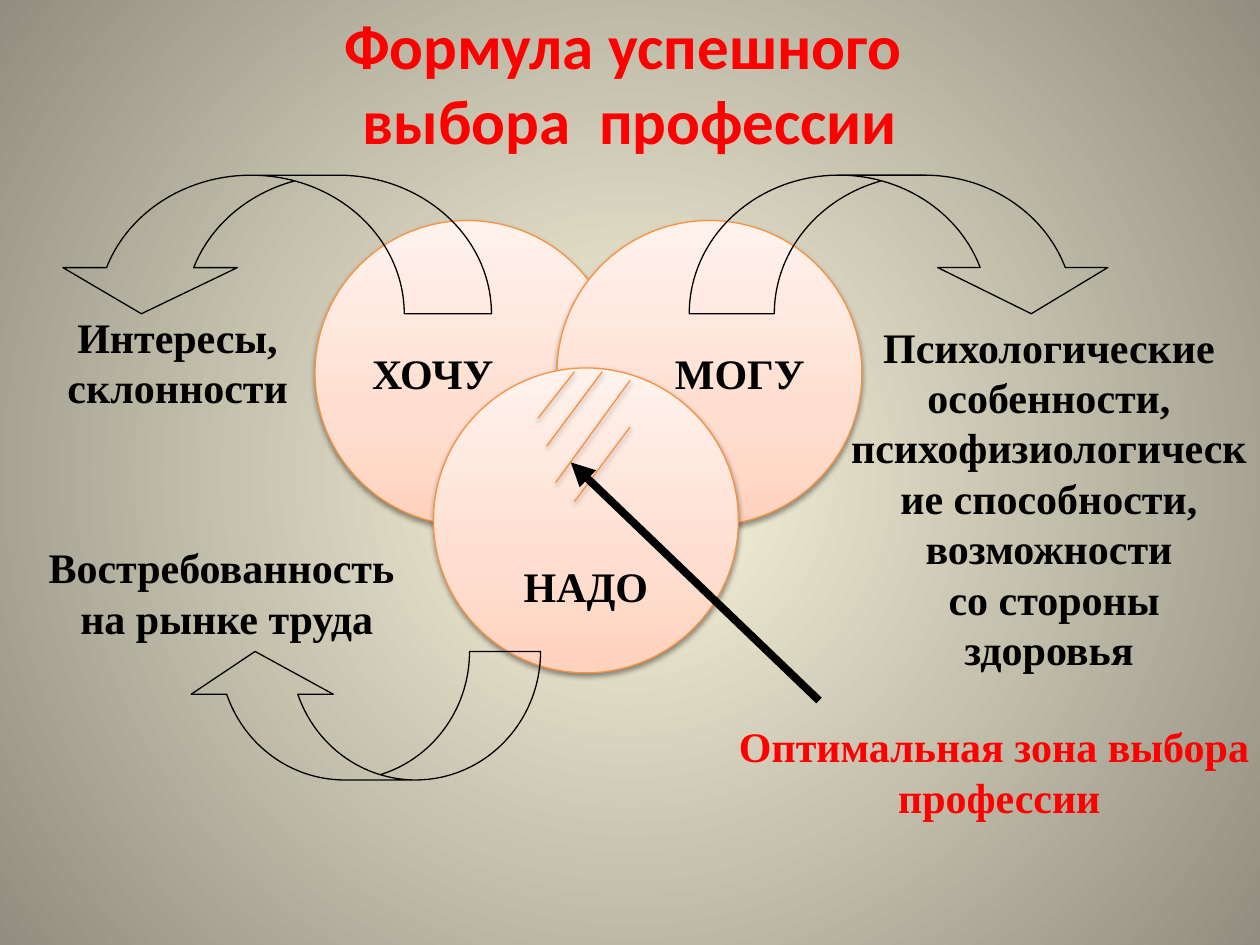
from lxml import etree
from pptx import Presentation, util as u
from pptx.dml.color import RGBColor
from pptx.enum import shapes, text
from pptx.oxml import ns, parse_xml

HUES = {
    "red": "FF0000", "ink": "000000", "rim": "F69240",
    "low": "FFD2BD", "mid": "FFDED0", "high": "FFF2ED",
    "glow": "FCF7DD", "edge": "918E81",
}
SERIF = "Times New Roman"
ALIGN = text.PP_ALIGN
KIND = shapes.MSO_SHAPE


class Board:
    """Holds the style and the current slide."""

    def __init__(self, deck):
        self.slide = deck.slides.add_slide(deck.slide_layouts[6])
        self.items = self.slide.shapes

    def hue(self, name):
        return RGBColor.from_string(HUES[name])

    def box(self, *nums):
        return [u.Inches(n) for n in nums]

    def blend(self, fill, node, stops, shade):
        fill.gradient()
        grad = node.find(".//" + ns.qn("a:gradFill"))
        marks = "".join(
            f'<a:gs pos="{pos * 1000}"><a:srgbClr val="{HUES[name]}"/></a:gs>'
            for pos, name in stops)
        fresh = parse_xml(
            f'<a:gradFill {ns.nsdecls("a")} rotWithShape="1">'
            f'<a:gsLst>{marks}</a:gsLst>{shade}</a:gradFill>')
        grad.getparent().replace(grad, fresh)

    def back(self):
        shade = ('<a:path path="circle"><a:fillToRect l="50000" t="50000" '
                 'r="50000" b="50000"/></a:path>')
        self.blend(self.slide.background.fill, self.slide.element,
                   [(0, "glow"), (100, "edge")], shade)

    def shadow(self, item):
        item.element.spPr.append(parse_xml(
            f'<a:effectLst {ns.nsdecls("a")}>'
            '<a:outerShdw blurRad="39370" dist="20320" dir="5400000" rotWithShape="0">'
            f'<a:srgbClr val="{HUES["ink"]}"><a:alpha val="38000"/></a:srgbClr>'
            '</a:outerShdw></a:effectLst>'))

    def stroke(self, item, name, width):
        item.line.color.rgb = self.hue(name)
        item.line.width = u.Pt(width)

    def put(self, frame, lines, name="ink", size=24, face=SERIF, align=ALIGN.CENTER):
        for i, line in enumerate(lines):
            para = frame.add_paragraph() if i else frame.paragraphs[0]
            para.text = line
            para.alignment = align
            font = para.font
            font.name, font.size, font.bold = face, u.Pt(size), True
            font.color.rgb = self.hue(name)

    def label(self, place, lines, **style):
        frame = self.items.add_textbox(*self.box(*place)).text_frame
        frame.word_wrap = True
        self.put(frame, lines, **style)

    def disc(self, x, y, word, align, low=False):
        item = self.items.add_shape(KIND.OVAL, *self.box(x, y, 2.42, 2.42))
        self.blend(item.fill, item.element,
                   [(0, "low"), (35, "mid"), (100, "high")],
                   '<a:lin ang="16200000" scaled="0"/>')
        self.stroke(item, "rim", 0.75)
        self.shadow(item)
        frame = item.text_frame
        frame.word_wrap = False
        frame.vertical_anchor = text.MSO_ANCHOR.MIDDLE
        if low:
            frame.vertical_anchor = text.MSO_ANCHOR.BOTTOM
            frame.margin_bottom = u.Inches(0.14)
        self.put(frame, [word], align=align)

    def line(self, ends, name, width):
        item = self.items.add_connector(shapes.MSO_CONNECTOR.STRAIGHT, *self.box(*ends))
        self.stroke(item, name, width)
        return item

    def hatch(self, *ends):
        self.shadow(self.line(ends, "rim", 0.75))

    def arrow(self, *ends):
        item = self.line(ends, "ink", 4.5)
        props = item.element.spPr
        etree.SubElement(props.find(ns.qn("a:ln")), ns.qn("a:tailEnd"), type="triangle")
        etree.SubElement(props, ns.qn("a:effectLst"))

    def curve(self, kind, place, bend, turn=0):
        item = self.items.add_shape(kind, *self.box(*place))
        item.rotation = turn
        for i, part in enumerate((bend, 2 * bend, 0.333)):
            item.adjustments[i] = part
        item.fill.background()
        self.stroke(item, "ink", 0.75)
        item.shadow.inherit = False


def main():
    deck = Presentation()
    deck.slide_width, deck.slide_height = u.Inches(10), u.Inches(7.5)
    board = Board(deck)
    board.back()

    board.disc(2.5, 1.75, "ХОЧУ", ALIGN.LEFT)
    board.disc(4.42, 1.75, "МОГУ", ALIGN.RIGHT)
    board.disc(3.44, 2.92, "НАДО", ALIGN.CENTER, low=True)
    for ends in ((4.56, 2.95, 4.27, 3.32), (4.78, 2.95, 4.34, 3.54),
                 (5, 3.02, 4.41, 3.83), (5, 3.39, 4.56, 3.98)):
        board.hatch(*ends)

    board.label((5.76, 5.67, 4.26, 0.91),
                ["Оптимальная зона выбора", " профессии"], name="red")
    board.arrow(6.5, 5.56, 4.53, 3.67)
    board.label((0, 0, 10, 1.3), ["Формула успешного ", "выбора  профессии"],
                name="red", size=36, face="Calibri")

    board.curve(KIND.CURVED_UP_ARROW, (0.43, 1.39, 3.47, 1.1), 0.629, 180)
    board.label((0.33, 2.42, 2.16, 0.91), ["Интересы,", "склонности"])
    board.curve(KIND.CURVED_DOWN_ARROW, (1.46, 5.17, 2.83, 1.02), 0.553, 180)
    board.label((0.28, 4.25, 3.04, 0.91), ["Востребованность ", "на рынке труда"])
    board.curve(KIND.CURVED_DOWN_ARROW, (5.47, 1.39, 3.39, 1.1), 0.614)
    board.label((6.65, 2.5, 3.35, 2.93),
                ["Психологические особенности,",
                 "психофизиологические способности, возможности",
                 " со стороны здоровья"])
    deck.save("out.pptx")


if __name__ == "__main__":
    main()
